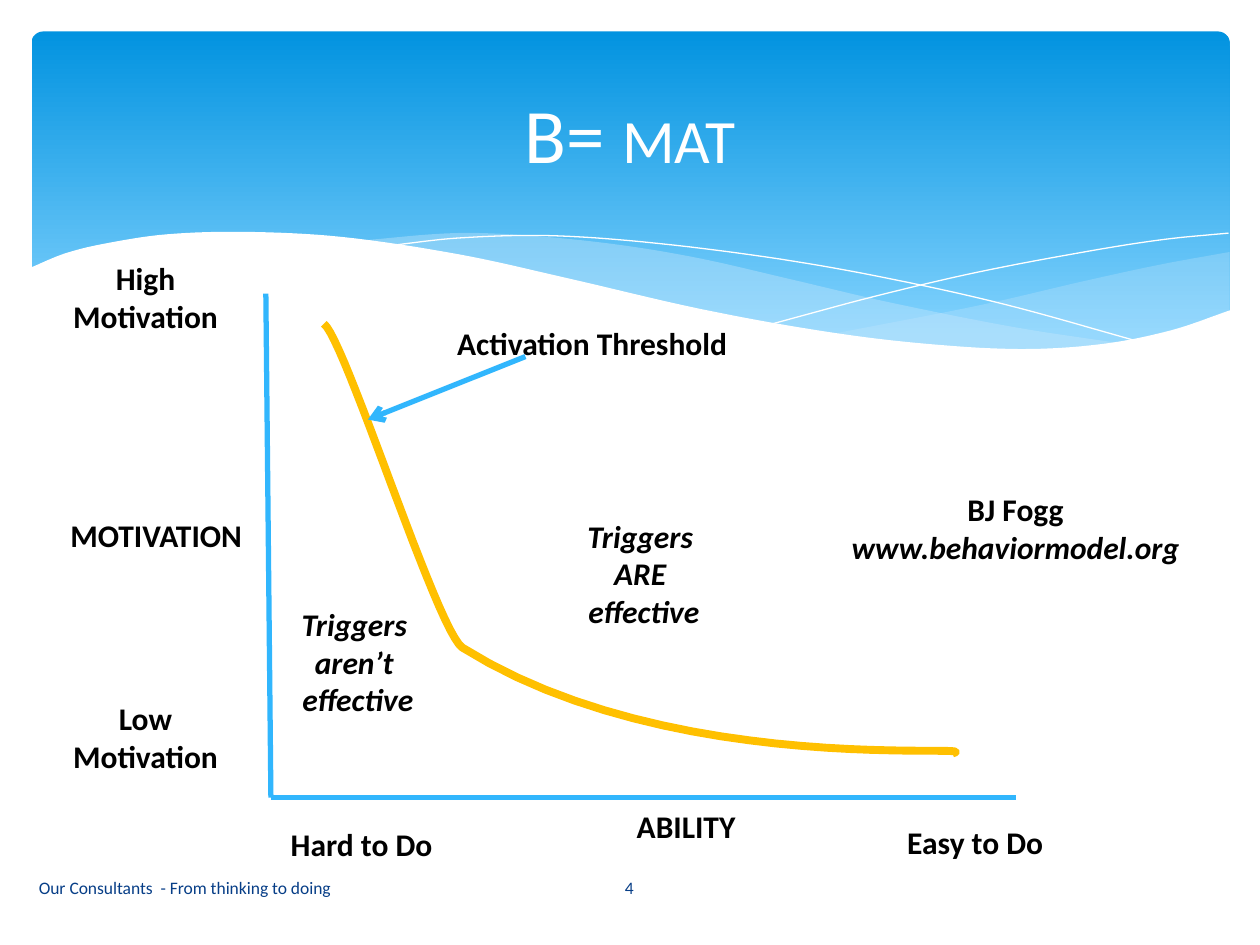
import dataclasses

import pptx
import pptx.dml.color
import pptx.enum.shapes
import pptx.enum.text
import pptx.oxml
import pptx.oxml.ns
import pptx.util

ALIGN = pptx.enum.text.PP_ALIGN
ANCHOR = pptx.enum.text.MSO_ANCHOR
SHAPE = pptx.enum.shapes.MSO_SHAPE

# The slide is a grid of 100 columns by 75 rows
COLUMNS, ROWS = 100, 75
WIDTH, HEIGHT = pptx.util.Inches(10), pptx.util.Inches(7.5)


@dataclasses.dataclass(frozen=True)
class Theme:
    font: str = "Calibri"
    title_size: int = 44
    label_size: int = 18
    footer_size: int = 10
    axis_width: float = 3
    curve_width: float = 4.5
    white: str = "FFFFFF"
    text: str = "000000"
    footer: str = "073E87"
    axis: str = "31B6FD"
    curve: str = "FFC000"
    wave: str = "C6E7FC"
    sky: tuple = ("0293E0", "83D3FE")


THEME = Theme()


def col(n):
    return round(WIDTH * n / COLUMNS)


def row(n):
    return round(HEIGHT * n / ROWS)


def box(left, top, width, height):
    return col(left), row(top), col(width), row(height)


def rgb(value):
    return pptx.dml.color.RGBColor.from_string(value)


def bezier(a, b, c, d, steps=24):
    """Points of a cubic curve after its start a."""
    return [tuple((1 - t) ** 3 * p + 3 * t * (1 - t) ** 2 * q
                  + 3 * t * t * (1 - t) * r + t ** 3 * s
                  for p, q, r, s in zip(a, b, c, d))
            for t in (i / steps for i in range(1, steps + 1))]


def smooth(knots):
    """Smooth curve through knots that are ordered from left to right or back."""
    def slope(i):
        (x0, y0), (x1, y1) = knots[max(i - 1, 0)], knots[min(i + 1, len(knots) - 1)]
        return (y1 - y0) / (x1 - x0)

    points = [knots[0]]
    for i, (start, end) in enumerate(zip(knots, knots[1:])):
        third = (end[0] - start[0]) / 3
        points += bezier(start, (start[0] + third, start[1] + third * slope(i)),
                         (end[0] - third, end[1] - third * slope(i + 1)), end, 8)
    return points


def add_outline(slide, points, fill=None, opacity=100, line=None, width=0):
    """Filled area, or an open stroke where no fill is given."""
    corners = [(col(x), row(y)) for x, y in points]
    builder = slide.shapes.build_freeform(*corners[0], scale=1)
    builder.add_line_segments(corners[1:], close=fill is not None)
    outline = builder.convert_to_shape()
    outline.shadow.inherit = False
    if fill:
        outline.fill.solid()
        outline.fill.fore_color.rgb = rgb(fill)
        color = outline.element.spPr.find(".//" + pptx.oxml.ns.qn("a:srgbClr"))
        alpha = color.makeelement(pptx.oxml.ns.qn("a:alpha"), {"val": str(opacity * 1000)})
        color.append(alpha)
    else:
        outline.fill.background()
    if line:
        outline.line.color.rgb = rgb(line)
        outline.line.width = pptx.util.Pt(width)
    else:
        outline.line.fill.background()


def add_axis(slide, start, end, arrow=False):
    axis = slide.shapes.add_connector(pptx.enum.shapes.MSO_CONNECTOR.STRAIGHT,
                                      col(start[0]), row(start[1]), col(end[0]), row(end[1]))
    axis.line.color.rgb = rgb(THEME.axis)
    axis.line.width = pptx.util.Pt(THEME.axis_width)
    properties = axis.element.spPr
    if arrow:
        stroke = properties.find(pptx.oxml.ns.qn("a:ln"))
        stroke.append(stroke.makeelement(pptx.oxml.ns.qn("a:tailEnd"), {"type": "arrow"}))
    properties.append(properties.makeelement(pptx.oxml.ns.qn("a:effectLst"), {}))


def style(paragraph, size, color, align, bold=False, italic=False):
    paragraph.alignment = align
    font = paragraph.font
    font.name, font.size, font.color.rgb = THEME.font, pptx.util.Pt(size), rgb(color)
    font.bold, font.italic = bold, italic


def add_label(slide, place, lines, align=ALIGN.CENTER, italic=()):
    """Bold diagram label; italic holds the numbers of the slanted lines."""
    frame = slide.shapes.add_textbox(*box(*place)).text_frame
    frame.word_wrap = False
    frame.auto_size = pptx.enum.text.MSO_AUTO_SIZE.SHAPE_TO_FIT_TEXT
    frame.text = "\n".join(lines)
    for number, paragraph in enumerate(frame.paragraphs):
        style(paragraph, THEME.label_size, THEME.text, align, True, number in italic)


def add_footer(slide, place, text, align):
    frame = slide.shapes.add_textbox(*box(*place)).text_frame
    frame.word_wrap = True
    frame.vertical_anchor = ANCHOR.MIDDLE
    frame.text = text
    style(frame.paragraphs[0], THEME.footer_size, THEME.footer, align)


def add_banner(slide):
    sky = slide.shapes.add_shape(SHAPE.ROUNDED_RECTANGLE, *box(2.5, 2.5, 95.1, 27))
    sky.adjustments[0] = 0.034
    sky.shadow.inherit = False
    sky.line.fill.background()
    sky.fill.gradient()
    sky.fill.gradient_angle = 270
    for stop, color, position in zip(sky.fill.gradient_stops, THEME.sky, (0, 0.9)):
        stop.color.rgb, stop.position = rgb(color), position

    # Translucent waves
    right_top = smooth([(97.6, 20), (92.1, 21), (86.1, 22.3), (77.9, 24.2), (66.1, 26.5)])
    right_bottom = smooth([(66.1, 26.5), (71.9, 27.2), (80.3, 27.8), (87.2, 27.4),
                           (92.8, 26.3), (97.6, 24.7)])
    add_outline(slide, right_top + right_bottom, THEME.wave, 29)
    middle_top = smooth([(89.3, 27.3), (80.7, 26), (70.6, 24), (62.9, 22.2), (55.5, 20.5),
                         (48.9, 19.4), (42, 18.7), (36.1, 18.5), (28.6, 19.1)])
    middle_bottom = smooth([(28.6, 19.1), (36.2, 20.3), (44.9, 22.2), (56.6, 24.8),
                            (66.5, 26.6), (74.8, 27.6), (82.8, 27.8), (89.3, 27.3)])
    add_outline(slide, middle_top + middle_bottom, THEME.wave, 40)

    # Hairlines
    for knots in ([(30.9, 19.5), (36.3, 18.9), (43.3, 18.7), (51, 19.2), (60.8, 20.4),
                   (69.5, 21.9), (79.5, 24.1), (90.7, 27.2)],
                  [(61.3, 25.7), (69.5, 23.5), (77.6, 21.6), (86.6, 19.9), (92.4, 19),
                   (97.5, 18.5)]):
        add_outline(slide, smooth(knots), line=THEME.white)

    # White wave that cuts the banner's lower edge
    edge = smooth([(97.7, 24.6), (93, 26.2), (87.5, 27.3), (80.9, 27.7), (72.6, 27.2),
                   (64.8, 26.2), (55.5, 24.5), (44.7, 22), (36.5, 20.2), (27.1, 18.8),
                   (19.3, 18.4), (13.2, 18.6), (8.5, 19.3), (5.2, 20.1), (2.3, 21.3)])
    add_outline(slide, edge + [(2.3, 32.9), (97.7, 32.9)], THEME.white)


def set_title(slide):
    title = slide.shapes.title
    title.left, title.top, title.width, title.height = box(5, 3.7, 90, 13.7)
    title.element.getparent().append(title.element)  # in front of the banner
    frame = title.text_frame
    frame.vertical_anchor = ANCHOR.MIDDLE
    heading = frame.paragraphs[0]
    heading.add_run().text = "B= "
    factors = heading.add_run()
    factors.text = "mat"
    factors._r.get_or_add_rPr().set("cap", "small")
    style(heading, THEME.title_size, THEME.white, ALIGN.CENTER)


def add_model(slide):
    # Axes
    origin = (21.5, 63.3)
    add_axis(slide, (21.1, 23.3), origin)
    add_axis(slide, origin, (80.6, 63.3))
    add_label(slide, (4.6, 40.5, 16.4, 4), ["MOTIVATION"], ALIGN.LEFT)
    for level, top in (("High", 20.1), ("Low", 55)):
        add_label(slide, (4.6, top, 13.9, 7.1), [level, "Motivation"])
    add_label(slide, (21.9, 65, 13.6, 4), ["Hard to Do"])
    add_label(slide, (70.8, 64.8, 13.2, 4), ["Easy to Do"])
    add_label(slide, (49.2, 63.6, 10.5, 4), ["ABILITY"])

    # Threshold curve
    start, bend = (25.7, 25.7), (36.7, 51.4)
    curve = ([start] + bezier(start, (27.3, 26.7), (34.7, 50.1), bend)
             + bezier(bend, (53.4, 61.9), (78.8, 58.9), (75.6, 59.8)))
    add_outline(slide, curve, line=THEME.curve, width=THEME.curve_width)

    # Regions, callout and credit
    for left, top, verb in ((22.9, 47.5, "aren’t "), (45.6, 40.5, "ARE ")):
        add_label(slide, (left, top, 11, 10.1), ["Triggers ", verb, "effective"],
                  italic=(0, 1, 2))
    add_label(slide, (35.3, 25.2, 24.5, 4), ["Activation Threshold"], ALIGN.LEFT)
    add_axis(slide, (41.7, 28.3), (29.2, 33.3), arrow=True)
    add_label(slide, (66.4, 38.4, 28.4, 7.1), ["BJ Fogg", "www.behaviormodel.org"],
              italic=(1,))


def main():
    deck = pptx.Presentation()
    deck.slide_width, deck.slide_height = WIDTH, HEIGHT
    slide = deck.slides.add_slide(deck.slide_layouts.get_by_name("Title Only"))
    add_banner(slide)
    add_footer(slide, (2.1, 68.4, 41.4, 4), "Our Consultants  - From thinking to doing", ALIGN.LEFT)
    add_footer(slide, (43.6, 68.4, 12.7, 4), "4", ALIGN.CENTER)
    set_title(slide)
    add_model(slide)
    deck.save("out.pptx")


if __name__ == "__main__":
    main()
